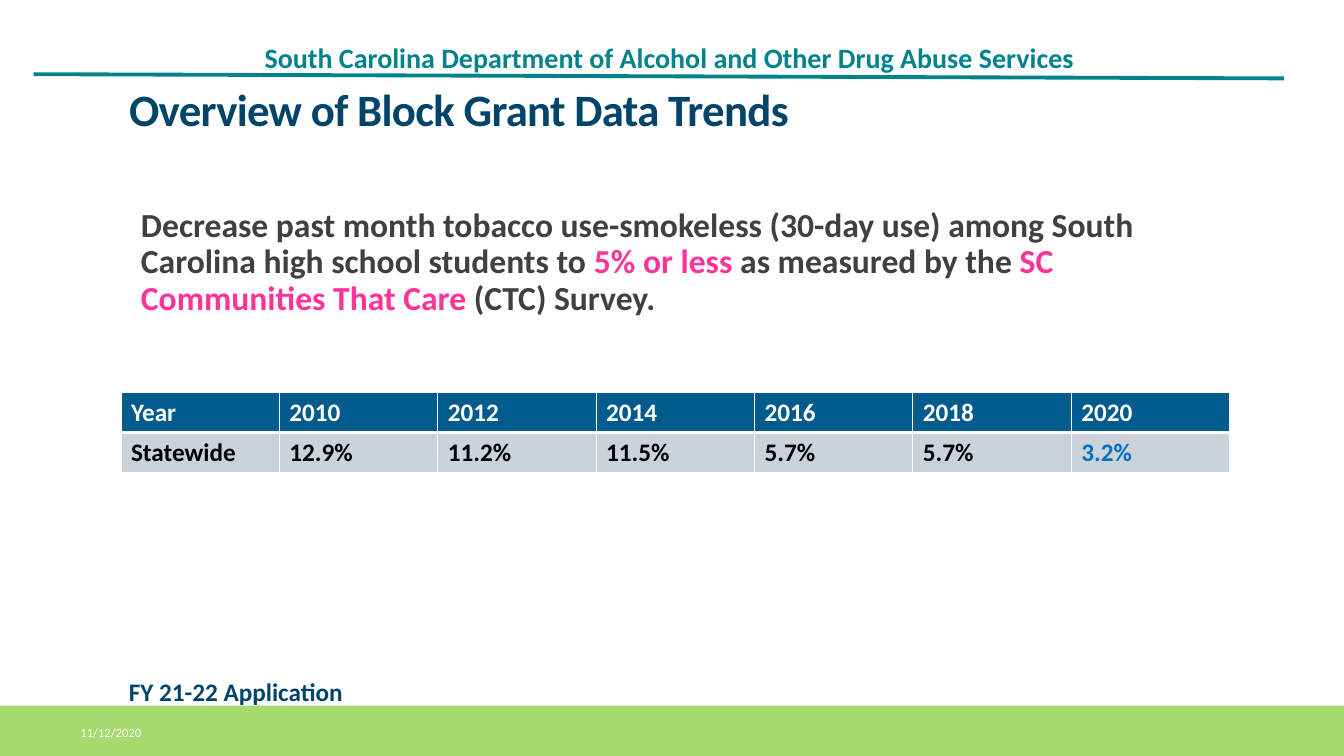
from lxml import etree
from pptx import Presentation
from pptx.dml.color import RGBColor
from pptx.enum.shapes import MSO_CONNECTOR, MSO_SHAPE
from pptx.enum.text import MSO_ANCHOR, MSO_AUTO_SIZE, PP_ALIGN
from pptx.oxml.ns import qn
from pptx.util import Pt

STRAIGHT, RECTANGLE = MSO_CONNECTOR.STRAIGHT, MSO_SHAPE.RECTANGLE
TOP, MIDDLE, LEFT = MSO_ANCHOR.TOP, MSO_ANCHOR.MIDDLE, PP_ALIGN.LEFT
NO_AUTOFIT = MSO_AUTO_SIZE.NONE
FONT = "Calibri"
WIDTH, HEIGHT = 960, 540
TEAL, NAVY, BLUE, GREEN = "00838B", "014469", "015B8C", "A6D96E"
GRAY, PINK, WHITE, BLACK = "404040", "FF3399", "FFFFFF", "000000"
ROW_FILL, HIGHLIGHT = "CCD2DA", "0070C0"

GOAL = [
    ("Decrease past month tobacco use-smokeless (30-day use) among "
     "South Carolina high school students to ", GRAY),
    ("5% or less ", PINK),
    ("as measured by the ", GRAY),
    ("SC Communities That Care ", PINK),
    ("(CTC) Survey.", GRAY),
]
TRENDS = [
    ["Year", "2010", "2012", "2014", "2016", "2018", "2020"],
    ["Statewide", "12.9%", "11.2%", "11.5%", "5.7%", "5.7%", "3.2%"],
]


def color(hex_string):
    return RGBColor.from_string(hex_string)


def style(font, size, hex_string, bold=True):
    font.name, font.size, font.bold = FONT, Pt(size), bold
    font.color.rgb = color(hex_string)


def add_text(slide, box, text, size, hex_string, bold=True, anchor=TOP, wrap=True):
    shape = slide.shapes.add_textbox(*map(Pt, box))
    frame = shape.text_frame
    frame.text = text
    frame.word_wrap, frame.vertical_anchor = wrap, anchor
    for run in frame.paragraphs[0].runs:
        style(run.font, size, hex_string, bold)
    return frame


def add_header(slide, box):
    """Agency name above a slightly sloping rule."""
    left, top, width, height = box
    frame = add_text(slide, (left + 160, top, 735, height),
                     "South Carolina Department of Alcohol and Other Drug Abuse Services",
                     20, TEAL, anchor=MIDDLE)
    frame.margin_left = frame.margin_right = Pt(5)
    frame.margin_top = frame.margin_bottom = Pt(3)
    frame.paragraphs[0].line_spacing = 0.9
    rule = slide.shapes.add_connector(
        STRAIGHT, Pt(left), Pt(top + 33), Pt(left + width), Pt(top + 36))
    rule.line.color.rgb, rule.line.width = color(TEAL), Pt(2.75)
    etree.SubElement(rule._element.spPr, qn("a:effectLst"))


def add_title(slide, box):
    title = slide.shapes.title
    title.left, title.top, title.width, title.height = map(Pt, box)
    frame = title.text_frame
    frame.text = "Overview of Block Grant Data Trends"
    frame.auto_size, frame.vertical_anchor = NO_AUTOFIT, TOP
    paragraph = frame.paragraphs[0]
    paragraph.alignment, paragraph.line_spacing = LEFT, 0.85
    run = paragraph.runs[0]
    style(run.font, 32, NAVY)
    run._r.get_or_add_rPr().set("spc", "-50")


def add_goal(slide, box):
    """Target statement with highlighted phrases."""
    frame = add_text(slide, box, "", 24, GRAY)
    paragraph = frame.paragraphs[0]
    paragraph.line_spacing = 0.9
    paragraph._p.get_or_add_pPr().set("marL", str(Pt(7.2)))
    for text, hex_string in GOAL:
        run = paragraph.add_run()
        run.text = text
        style(run.font, 24, hex_string)


def set_borders(cell, bottom_width):
    properties = cell._tc.get_or_add_tcPr()
    widths = {"a:lnL": 1, "a:lnR": 1, "a:lnT": 1, "a:lnB": bottom_width}
    for position, (tag, width) in enumerate(widths.items()):
        line = etree.Element(qn(tag), w=str(Pt(width)))
        fill = etree.SubElement(line, qn("a:solidFill"))
        etree.SubElement(fill, qn("a:srgbClr"), val=WHITE)
        properties.insert(position, line)


def add_trend_table(slide, box):
    rows, columns = len(TRENDS), len(TRENDS[0])
    table = slide.shapes.add_table(rows, columns, *map(Pt, box)).table
    for row, values in enumerate(TRENDS):
        header = row == 0
        for column, value in enumerate(values):
            cell = table.cell(row, column)
            cell.text = value
            cell.fill.solid()
            cell.fill.fore_color.rgb = color(BLUE if header else ROW_FILL)
            latest = column == columns - 1
            text_color = WHITE if header else HIGHLIGHT if latest else BLACK
            style(cell.text_frame.paragraphs[0].runs[0].font, 18, text_color)
            set_borders(cell, 3 if header or rows == 1 else 1)
            if not header:
                cell._tc.tcPr.find(qn("a:lnT")).set("w", str(Pt(3)))


def add_footer(slide, box):
    """Green band with the date, and the application label above it."""
    left, top, width, height = box
    band = slide.shapes.add_shape(RECTANGLE, *map(Pt, box))
    band.shadow.inherit = False
    band.fill.solid()
    band.fill.fore_color.rgb = color(GREEN)
    band.line.fill.background()
    add_text(slide, (left + 50.4, top + 4.5, 194, 29), "11/12/2020",
             9, WHITE, bold=False, anchor=MIDDLE)
    add_text(slide, (left + 85, top - 24.5, 168, 29), "FY 21-22 Application",
             18, NAVY, wrap=False)


def main():
    presentation = Presentation()
    presentation.slide_width, presentation.slide_height = Pt(WIDTH), Pt(HEIGHT)
    slide = presentation.slides.add_slide(presentation.slide_layouts[5])
    add_header(slide, (24, 20, 893, 45))
    add_footer(slide, (0, 504, WIDTH, 36))
    add_title(slide, (85, 61, 792, 48))
    add_goal(slide, (86.4, 145.4, 792, 100))
    add_trend_table(slide, (86.4, 280, 792, 57.6))
    presentation.save("out.pptx")


if __name__ == "__main__":
    main()
